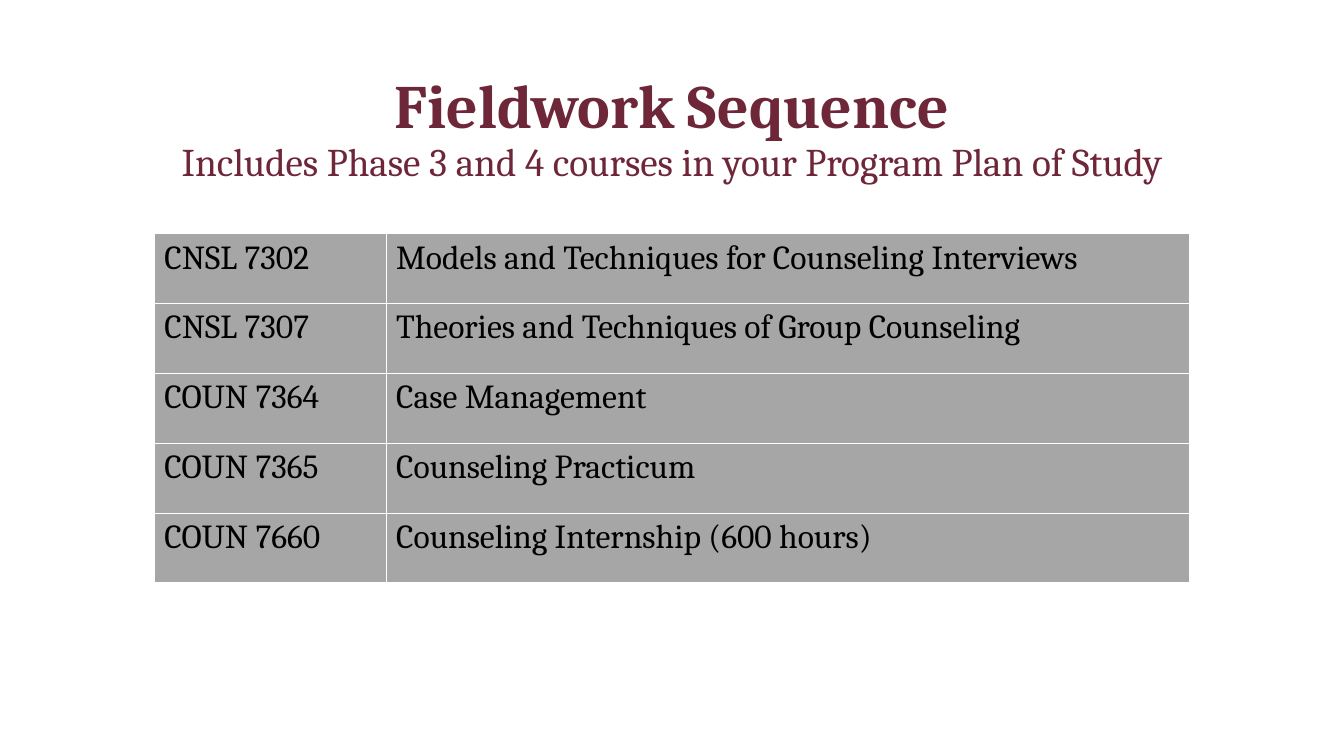
from pptx import Presentation
from pptx.dml.color import RGBColor
from pptx.enum import text
from pptx.oxml import parse_xml
from pptx.oxml.ns import nsdecls
from pptx.util import Cm, Pt

FONT = "Cambria"
COLOURS = {"maroon": "6E2639", "grey": "A6A6A6", "black": "000000", "white": "FFFFFF"}
COURSES = [
    ("CNSL 7302", "Models and Techniques for Counseling Interviews"),
    ("CNSL 7307", "Theories and Techniques of Group Counseling"),
    ("COUN 7364", "Case Management"),
    ("COUN 7365", "Counseling Practicum"),
    ("COUN 7660", "Counseling Internship (600 hours)"),
]
COLUMN_WIDTHS = (Cm(5.84), Cm(20.24))
ROW_HEIGHT = Cm(1.76)


def write(frame, wording, size, colour, bold=False):
    frame.text = wording
    font = frame.paragraphs[0].runs[0].font
    font.name, font.size, font.bold = FONT, Pt(size), bold
    font.color.rgb = RGBColor.from_string(COLOURS[colour])


def write_heading(box, wording, size, anchor, bold=False):
    frame = box.text_frame
    frame.word_wrap = True
    frame.auto_size = text.MSO_AUTO_SIZE.NONE
    frame.vertical_anchor = anchor
    write(frame, wording, size, "maroon", bold)
    para = frame.paragraphs[0]
    para.alignment = text.PP_ALIGN.CENTER
    para.line_spacing = 0.9


def add_borders(cell):
    properties = cell._tc.get_or_add_tcPr()
    for position, side in enumerate(("lnL", "lnR", "lnT", "lnB")):
        properties.insert(position, parse_xml(
            f'<a:{side} {nsdecls("a")} w="{Pt(1)}"><a:solidFill>'
            f'<a:srgbClr val="{COLOURS["white"]}"/></a:solidFill></a:{side}>'))


def add_course_table(page):
    table = page.shapes.add_table(
        len(COURSES), len(COLUMN_WIDTHS), Cm(3.89), Cm(5.89),
        sum(COLUMN_WIDTHS), ROW_HEIGHT * len(COURSES)).table
    table.first_row = table.horz_banding = False
    for column, width in zip(table.columns, COLUMN_WIDTHS):
        column.width = width
    for row, course in zip(table.rows, COURSES):
        row.height = ROW_HEIGHT
        for cell, wording in zip(row.cells, course):
            write(cell.text_frame, wording, 24, "black")
            cell.fill.solid()
            cell.fill.fore_color.rgb = RGBColor.from_string(COLOURS["grey"])
            add_borders(cell)


def main():
    deck = Presentation()
    deck.slide_width, deck.slide_height = Cm(33.87), Cm(19.05)
    page = deck.slides.add_slide(deck.slide_layouts.get_by_name("Title Only"))

    title = page.shapes.title
    title.left, title.top = Cm(0), Cm(1.52)
    title.width, title.height = deck.slide_width, Cm(2.41)
    write_heading(title, "Fieldwork Sequence", 44, text.MSO_ANCHOR.MIDDLE, bold=True)

    subtitle = page.shapes.add_textbox(Cm(2.84), Cm(3.48), Cm(28.17), Cm(1.6))
    write_heading(subtitle, "Includes Phase 3 and 4 courses in your Program Plan of Study",
                  28, text.MSO_ANCHOR.TOP)

    add_course_table(page)
    deck.save("out.pptx")


if __name__ == "__main__":
    main()
